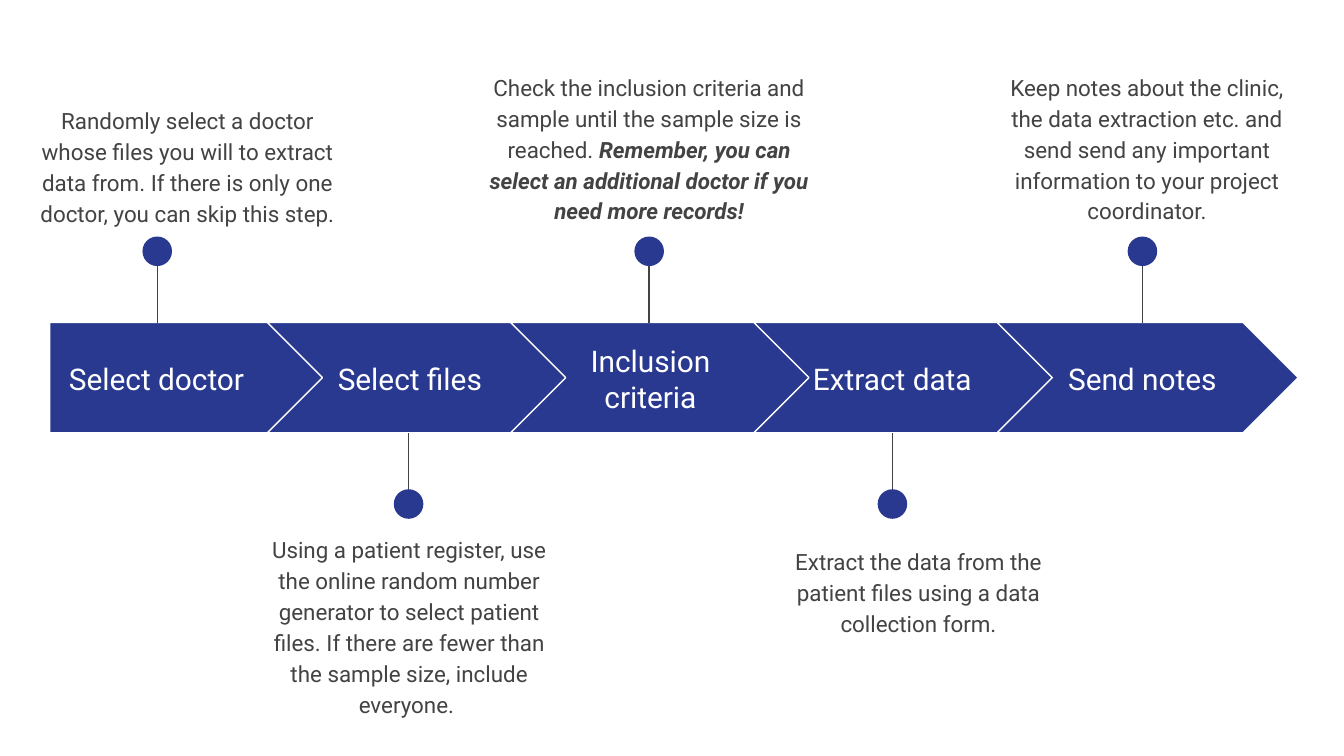
from dataclasses import dataclass

from lxml import etree
from pptx import Presentation
from pptx.dml.color import RGBColor
from pptx.enum.shapes import MSO_CONNECTOR, MSO_SHAPE
from pptx.enum.text import MSO_ANCHOR, PP_ALIGN
from pptx.oxml.ns import qn
from pptx.util import Inches, Pt

BLUE, GREY, WHITE = "2A3990", "434343", "FFFFFF"
FONT = "Roboto"
SLIDE_W = 10
BAND_TOP, BAND_H = 2.4, 0.82
FIRST_LEFT, FIRST_W = 0.37, 2.05
CHEVRON_LEFT, CHEVRON_W, PITCH = 1.99, 2.24, 1.81
LABEL_TOP, LABEL_H = 2.56, 0.51
DOT, STEM = 0.22, 0.53


@dataclass
class Step:
    """One stage: its label, label span, pin position and note."""
    label: str
    label_left: float
    label_w: float
    pin_x: float
    above: bool
    note_box: tuple
    note: str
    emphasis: str = ""


STEPS = [
    Step("Select doctor", 0.37, 1.59, 1.17, True, (0.17, 0.67, 2.45, 0.99),
         "Randomly select a doctor whose files you will to extract data from. "
         "If there is only one doctor, you can skip this step."),
    Step("Select files", 2.33, 1.44, 3.04, False, (1.82, 3.86, 2.45, 1.59),
         "Using a patient register, use the online random number generator to "
         "select patient files. If there are fewer than the sample size, "
         "include everyone. "),
    Step("Inclusion criteria", 4.12, 1.44, 4.83, True, (3.52, 0.42, 2.62, 1.65),
         "Check the inclusion criteria and sample until the sample size is reached. ",
         "Remember, you can select an additional doctor if you need more records!"),
    Step("Extract data", 5.92, 1.44, 6.64, False, (5.61, 3.95, 2.45, 0.99),
         "Extract the data from the patient files using a data collection form."),
    Step("Send notes", 7.78, 1.44, 8.5, True, (7.31, 0.42, 2.45, 1.19),
         "Keep notes about the clinic, the data extraction etc. and send send any "
         "important information to your project coordinator."),
]


def rgb(value):
    """Turn a hex string into a colour."""
    return RGBColor.from_string(value)


def add_filled(s, kind, box):
    """Add a blue preset shape without shadow."""
    sp = s.shapes.add_shape(kind, *map(Inches, box))
    sp.shadow.inherit = False
    sp.fill.solid()
    sp.fill.fore_color.rgb = rgb(BLUE)
    return sp


def add_text(s, box, text, size, color, anchor=MSO_ANCHOR.TOP):
    """Add a centred text box and return its paragraph."""
    tf = s.shapes.add_textbox(*map(Inches, box)).text_frame
    tf.word_wrap = True
    tf.vertical_anchor = anchor
    tf.margin_left = tf.margin_right = tf.margin_top = tf.margin_bottom = Inches(0.1)
    p = tf.paragraphs[0]
    p.alignment = PP_ALIGN.CENTER
    p.font.name, p.font.size = FONT, Pt(size)
    p.font.color.rgb = rgb(color)
    p.add_run().text = text
    return p


def add_arrow(s, kind, box, step):
    """Add one arrow of the band with its label."""
    sp = add_filled(s, kind, box)
    sp.adjustments[0] = 0.5
    sp.line.color.rgb = rgb(WHITE)
    sp.line.width = Pt(0.75)
    label_box = (step.label_left, LABEL_TOP, step.label_w, LABEL_H)
    add_text(s, label_box, step.label, 16, WHITE, MSO_ANCHOR.MIDDLE)


def add_pin(s, x, above):
    """Add a stem from the band to a dot above or below it."""
    edge = BAND_TOP if above else BAND_TOP + BAND_H
    tip = edge - STEM if above else edge + STEM
    stem = s.shapes.add_connector(
        MSO_CONNECTOR.STRAIGHT, *map(Inches, (x, tip, x, edge)))
    stem.line.color.rgb = rgb(GREY)
    stem.line.width = Pt(0.75)
    etree.SubElement(stem._element.spPr, qn("a:effectLst"))
    dot = add_filled(s, MSO_SHAPE.OVAL, (x - DOT / 2, tip - DOT / 2, DOT, DOT))
    dot.line.fill.background()


def add_note(s, step):
    """Add the explanation of a step, with any emphasised ending."""
    p = add_text(s, step.note_box, step.note, 12, GREY)
    p.line_spacing = 1.15
    p.space_after = Pt(16)
    if step.emphasis:
        r = p.add_run()
        r.text = step.emphasis
        r.font.bold = r.font.italic = True


def add_process(s):
    """Build the five steps from left to right."""
    for i, step in enumerate(STEPS):
        if i == 0:
            kind, left, width = MSO_SHAPE.PENTAGON, FIRST_LEFT, FIRST_W
        else:
            kind, width = MSO_SHAPE.CHEVRON, CHEVRON_W
            left = CHEVRON_LEFT + (i - 1) * PITCH
        add_arrow(s, kind, (left, BAND_TOP, width, BAND_H), step)
        add_pin(s, step.pin_x, step.above)
        add_note(s, step)


def main():
    """Create and save a 16:9 presentation."""
    prs = Presentation()
    prs.slide_width, prs.slide_height = Inches(SLIDE_W), Inches(SLIDE_W * 9 / 16)
    s = prs.slides.add_slide(prs.slide_layouts[6])
    add_process(s)
    prs.save("out.pptx")


if __name__ == "__main__":
    main()
